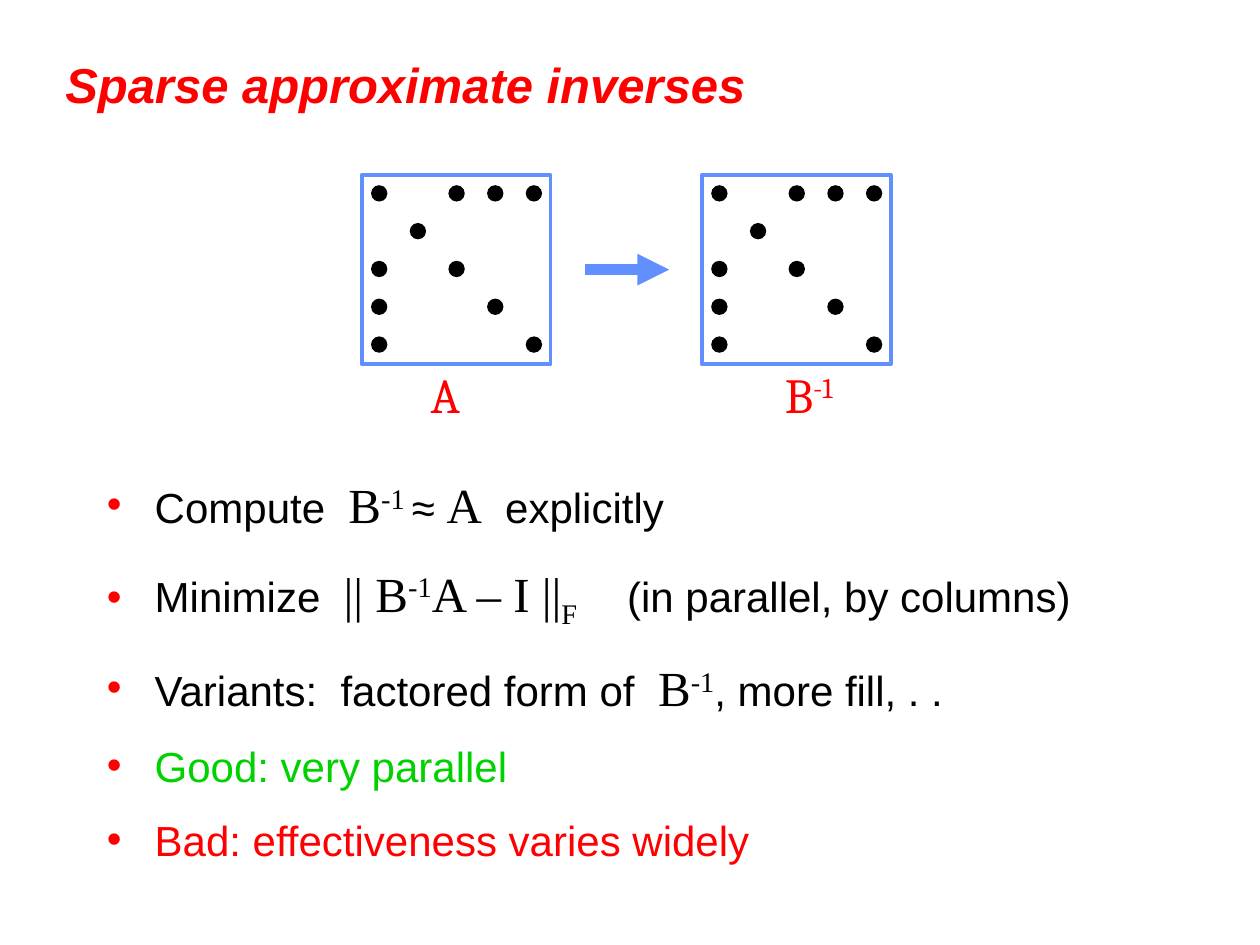
from lxml.etree import SubElement as Sub
from pptx import Presentation
from pptx.dml.color import RGBColor as Rgb
from pptx.enum.shapes import MSO_CONNECTOR as Wire, MSO_SHAPE as Form
from pptx.enum.text import MSO_ANCHOR as Anchor
from pptx.oxml.ns import qn
from pptx.util import Inches, Pt

theme = {
    "red": "FF0000", "green": "00D200", "black": "000000", "blue": "618FFD",
    "sans": "Arial", "serif": "Times New Roman", "math": "Cambria",
    "big": 28, "text": 24, "edge": 2.25, "arrow": 6,
}

deck = Presentation()
deck.slide_width, deck.slide_height = Inches(10), Inches(7.5)
slide = deck.slides.add_slide(deck.slide_layouts[6])
cell = deck.slide_width / 100


def grid(*vals):
    return [round(v * cell) for v in vals]


def write(para, parts, face, size, tint):
    for text, *shift in parts:
        run = para.add_run()
        run.text = text
        font = run.font
        font.name, font.size = theme[face], Pt(theme[size])
        font.color.rgb = Rgb.from_string(theme[tint])
        if shift:
            run._r.get_or_add_rPr().set("baseline", str(shift[0] * 1000))


head = slide.shapes.add_textbox(*grid(4.2, 3.3, 93.3, 6.7)).text_frame
head.word_wrap, head.vertical_anchor = True, Anchor.MIDDLE
write(head.paragraphs[0], [("Sparse approximate inverses",)], "sans", "big", "red")
head.paragraphs[0].runs[0].font.bold = True
head.paragraphs[0].runs[0].font.italic = True

sans, math = ("sans", "text"), ("serif", "big")
sup, sub = 30, -25
points = [
    ("black", [(sans, [("Compute  ",)]), (math, [("B",), ("-1 ", sup)]),
               (sans, [("≈ ",)]), (math, [("A",)]), (sans, [("  explicitly",)])]),
    ("black", [(sans, [("Minimize  ",)]),
               (math, [("|| B",), ("-1", sup), ("A – I ||",), ("F", sub), (" ", sub)]),
               (sans, [("(in parallel, by columns)",)])]),
    ("black", [(sans, [("Variants:  factored form of  ",)]),
               (math, [("B",), ("-1", sup)]), (sans, [(", more fill, . .",)])]),
    ("green", [(sans, [("Good: very parallel",)])]),
    ("red", [(sans, [("Bad: effectiveness varies widely",)])]),
]
body = slide.shapes.add_textbox(*grid(7.5, 35.8, 85, 36.7)).text_frame
body.word_wrap = True
for num, (tint, groups) in enumerate(points):
    para = body.add_paragraph() if num else body.paragraphs[0]
    para.line_spacing = 1.3
    props = para._p.get_or_add_pPr()
    dent = Inches(0.38)
    props.set("marL", str(dent))
    props.set("indent", str(-dent))
    Sub(Sub(props, qn("a:spcBef")), qn("a:spcPct"), val="20000")
    Sub(Sub(props, qn("a:buClr")), qn("a:srgbClr"), val=theme["red"])
    Sub(props, qn("a:buFont"), typeface=theme["sans"])
    Sub(props, qn("a:buChar"), char="•")
    for style, parts in groups:
        write(para, parts, *style, tint)
    for run in para.runs:
        if run.text == " ":
            run._r.get_or_add_rPr().set("spc", "2450")

rows = ["x.xxx", ".x...", "x.x..", "x..x.", "x...x"]
top, side, dot = 13.9, 15, 1.3
labels = [(28.7, 33.2, 4.8, [("A",)]), (55.7, 61.3, 6.8, [("B",), ("-1", sup)])]
for left, start, wide, parts in labels:
    group = slide.shapes.add_group_shape()
    for row, line in enumerate(rows):
        for col, mark in enumerate(line):
            if mark == "x":
                spot = group.shapes.add_shape(Form.OVAL, *grid(
                    left + 0.75 + col * 3.07, top + 0.8 + row * 3, dot, dot))
                spot.shadow.inherit = False
                spot.fill.solid()
                spot.fill.fore_color.rgb = Rgb.from_string(theme["black"])
                spot.line.fill.background()
    frame = group.shapes.add_shape(Form.RECTANGLE, *grid(left, top, side, side))
    frame.shadow.inherit = False
    frame.fill.background()
    frame.line.color.rgb = Rgb.from_string(theme["blue"])
    frame.line.width = Pt(theme["edge"])
    label = group.shapes.add_textbox(*grid(start, 28.4, wide, 5.7)).text_frame
    label.word_wrap = False
    write(label.paragraphs[0], parts, "math", "big", "red")

arrow = slide.shapes.add_connector(Wire.STRAIGHT, *grid(46.4, 21.4, 53.1, 21.4))
arrow.line.color.rgb = Rgb.from_string(theme["blue"])
arrow.line.width = Pt(theme["arrow"])
Sub(arrow.line._get_or_add_ln(), qn("a:tailEnd"), type="triangle")
Sub(arrow._element.spPr, qn("a:effectLst"))

deck.save("out.pptx")
